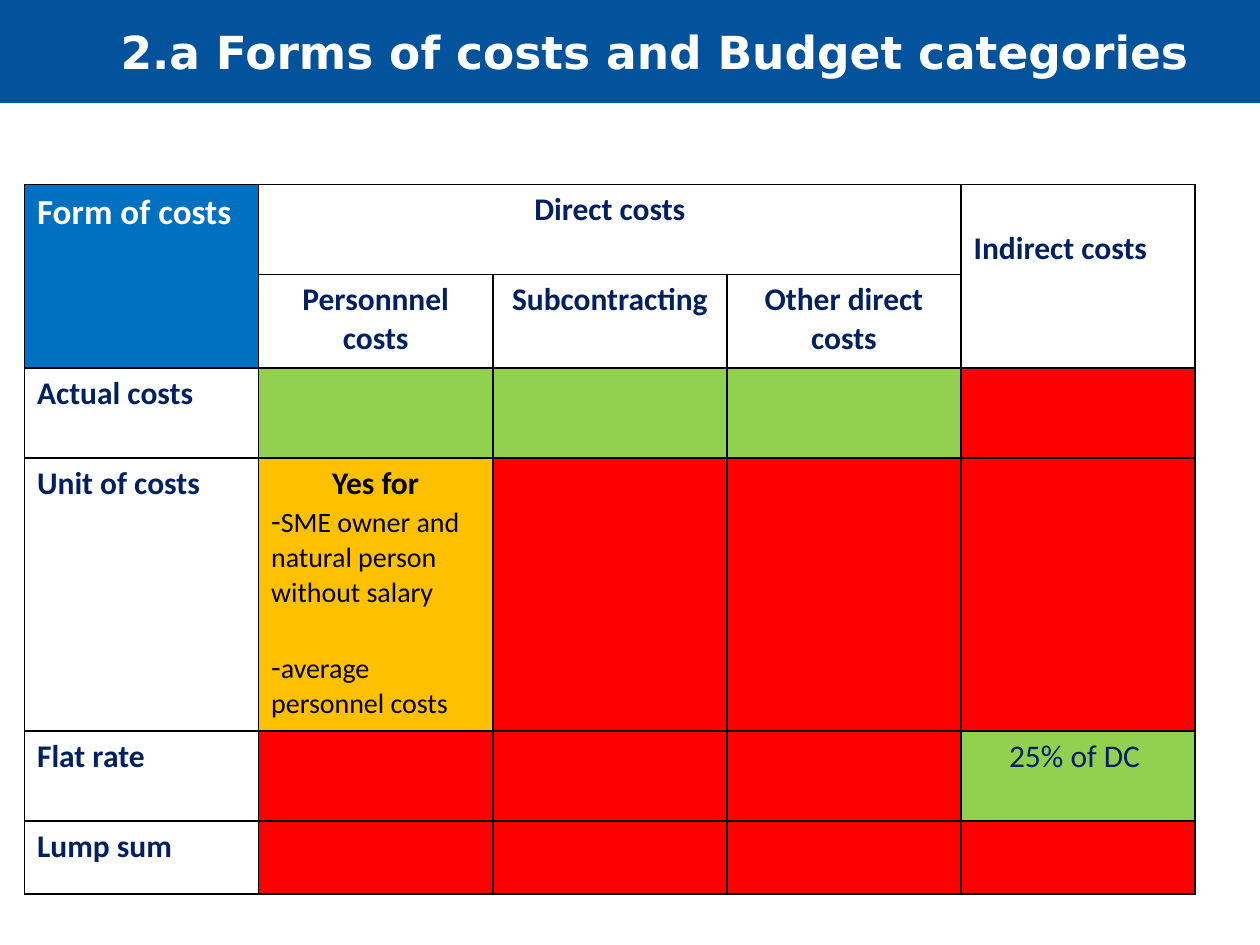
from lxml import etree
from pptx import Presentation
from pptx.dml.color import RGBColor
from pptx.enum.text import MSO_ANCHOR, MSO_AUTO_SIZE, PP_ALIGN
from pptx.oxml.ns import qn
from pptx.util import Pt

LEFT, CENTER = PP_ALIGN.LEFT, PP_ALIGN.CENTER
MIDDLE, NO_AUTOSIZE = MSO_ANCHOR.MIDDLE, MSO_AUTO_SIZE.NONE
NAVY, BLACK, WHITE = "002060", "000000", "FFFFFF"
BAR_BLUE, HEADER_BLUE = "02539C", "0070C0"
YES, PARTLY, NO = "92D050", "FFC000", "FF0000"

COLUMN_WIDTH = 133.8
ROW_HEIGHTS = [51.4, 53.6, 51.4, 156, 51.4, 41.8]
BLANK_LINE = 22
HEADINGS = [
    (0, 0, "Form of costs", 20, WHITE, LEFT),
    (0, 1, "Direct costs", 18, NAVY, CENTER),
    (0, 4, "Indirect costs", 18, NAVY, LEFT),
    (1, 1, "Personnnel costs", 18, NAVY, CENTER),
    (1, 2, "Subcontracting", 18, NAVY, CENTER),
    (1, 3, "Other direct costs", 18, NAVY, CENTER),
]
COST_FORMS = [
    ("Actual costs", [YES, YES, YES, NO]),
    ("Unit of costs", [PARTLY, NO, NO, NO]),
    ("Flat rate", [NO, NO, NO, YES]),
    ("Lump sum", [NO, NO, NO, NO]),
]
UNIT_COST_CASES = [
    ("SME owner and natural person without salary", 0),
    ("average personnel costs", BLANK_LINE),
]


def paint(color_format, color):
    color_format.rgb = RGBColor.from_string(color)


def fill_solid(item, color):
    item.fill.solid()
    paint(item.fill.fore_color, color)


def style(paragraph, size, color, align=LEFT, bold=True, face="Calibri"):
    paragraph.alignment = align
    font = paragraph.font
    font.size, font.bold, font.name = Pt(size), bold, face
    paint(font.color, color)


def write(cell, text, size=18, color=NAVY, align=LEFT, bold=True):
    paragraph = cell.text_frame.paragraphs[0]
    paragraph.text = text
    style(paragraph, size, color, align, bold)


def add_borders(cell):
    properties = cell._tc.get_or_add_tcPr()
    for side in ("a:lnL", "a:lnR", "a:lnT", "a:lnB"):
        line = etree.SubElement(properties, qn(side), w=str(Pt(1)))
        solid = etree.SubElement(line, qn("a:solidFill"))
        etree.SubElement(solid, qn("a:srgbClr"), val=BLACK)


def place_title(slide, left, top, width, height):
    title = slide.shapes.title
    title.left, title.top = Pt(left), Pt(top)
    title.width, title.height = Pt(width), Pt(height)
    fill_solid(title, BAR_BLUE)
    frame = title.text_frame
    frame.text = "2.a Forms of costs and Budget categories"
    frame.auto_size = NO_AUTOSIZE
    frame.vertical_anchor = MIDDLE
    frame.margin_left, frame.margin_right = Pt(69.6), Pt(7.2)
    style(frame.paragraphs[0], 26, WHITE, face="DejaVu Sans")


def write_unit_costs(cell):
    write(cell, "Yes for", color=BLACK, align=CENTER)
    for case, gap in UNIT_COST_CASES:
        paragraph = cell.text_frame.add_paragraph()
        style(paragraph, 16, BLACK, bold=False)
        paragraph.space_before = Pt(gap)
        dash = paragraph.add_run()
        dash.text = "-"
        dash.font.size = Pt(18)
        paragraph.add_run().text = case


def place_cost_table(slide, left, top):
    columns = 1 + len(COST_FORMS[0][1])
    table = slide.shapes.add_table(
        len(ROW_HEIGHTS), columns, Pt(left), Pt(top),
        Pt(columns * COLUMN_WIDTH), Pt(sum(ROW_HEIGHTS))).table
    table.first_row = table.horz_banding = False
    for column in table.columns:
        column.width = Pt(COLUMN_WIDTH)
    for row, height in zip(table.rows, ROW_HEIGHTS):
        row.height = Pt(height)
    for cell in table.iter_cells():
        add_borders(cell)
        cell.fill.background()

    table.cell(0, 0).merge(table.cell(1, 0))
    table.cell(0, 1).merge(table.cell(0, 3))
    table.cell(0, 4).merge(table.cell(1, 4))
    for row, column, text, size, color, align in HEADINGS:
        write(table.cell(row, column), text, size, color, align)
    fill_solid(table.cell(0, 0), HEADER_BLUE)
    table.cell(0, 4).margin_top = Pt(3.6 + BLANK_LINE)

    for row, (cost_form, statuses) in enumerate(COST_FORMS, 2):
        write(table.cell(row, 0), cost_form)
        for column, status in enumerate(statuses, 1):
            fill_solid(table.cell(row, column), status)
    write_unit_costs(table.cell(3, 1))
    write(table.cell(4, 4), "25% of DC ", align=CENTER, bold=False)


def main():
    deck = Presentation()
    deck.slide_width, deck.slide_height = Pt(720), Pt(540)
    slide = deck.slides.add_slide(deck.slide_layouts[5])
    place_title(slide, -0.7, 0, 721.4, 59)
    place_cost_table(slide, 14, 105.4)
    deck.save("out.pptx")


if __name__ == "__main__":
    main()
